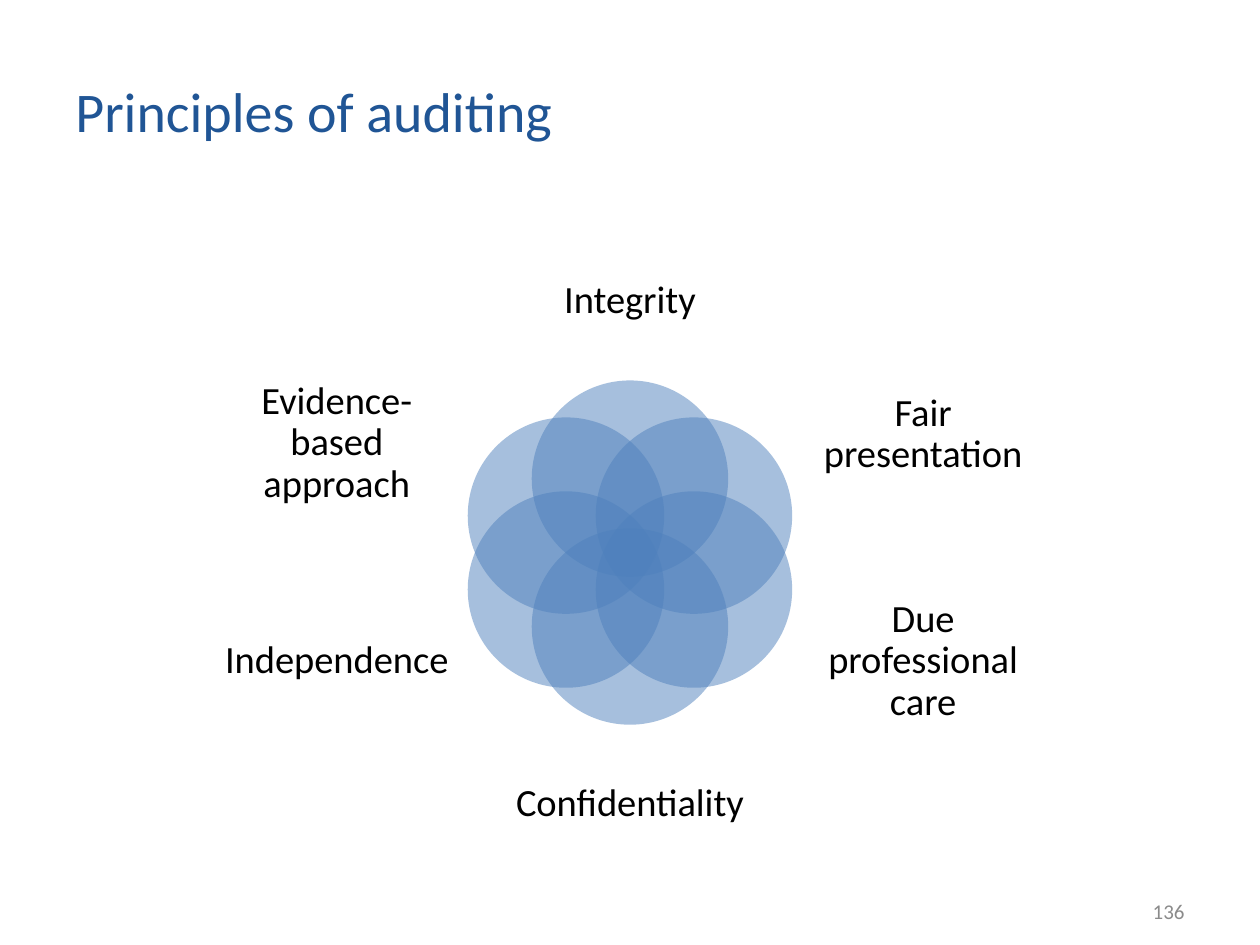
from dataclasses import dataclass
from math import cos, radians, sin

from lxml.etree import SubElement
from pptx import Presentation
from pptx.dml.color import RGBColor as RGB
from pptx.enum.shapes import MSO_SHAPE as Shape
from pptx.enum.text import MSO_ANCHOR as Anchor, PP_ALIGN as Align
from pptx.oxml.ns import qn
from pptx.util import Cm, Pt


@dataclass(frozen=True)
class Theme:
    font: str = "Calibri"
    title: RGB = RGB(0x20, 0x55, 0x95)
    text: RGB = RGB(0, 0, 0)
    muted: RGB = RGB(0x8B, 0x8B, 0x8B)
    petal: RGB = RGB(0x4F, 0x81, 0xBD)
    alpha: int = 50
    head: int = 32
    label: int = 22
    note: int = 12


THEME = Theme()

# Clockwise from the top
NAMES = ["Integrity", "Fair presentation", "Due professional care",
         "Confidentiality", "Independence", "Evidence-based approach"]


def add_text(slide, box, text, size, color, align=Align.LEFT):
    """Add a one-paragraph text, centred vertically in a box in cm."""
    frame = slide.shapes.add_textbox(*map(Cm, box)).text_frame
    frame.word_wrap = True
    frame.vertical_anchor = Anchor.MIDDLE
    para = frame.paragraphs[0]
    para.text = text
    para.alignment = align
    para.font.name = THEME.font
    para.font.size = Pt(size)
    para.font.color.rgb = color
    return frame


def add_petal(slide, x, y, size):
    """Add a translucent circle centred on x, y."""
    petal = slide.shapes.add_shape(
        Shape.OVAL, Cm(x - size / 2), Cm(y - size / 2), Cm(size), Cm(size))
    petal.shadow.inherit = False
    petal.line.fill.background()
    petal.fill.solid()
    petal.fill.fore_color.rgb = THEME.petal
    color = petal.fill._xPr.find(qn("a:solidFill"))[0]
    SubElement(color, qn("a:alpha"), val=str(THEME.alpha * 1000))


def add_label(slide, box, text):
    frame = add_text(slide, box, text, THEME.label, THEME.text, Align.CENTER)
    frame.margin_left = frame.margin_right = 0
    frame.margin_top = frame.margin_bottom = 0
    frame.paragraphs[0].line_spacing = 0.9


def add_venn(slide, box, names):
    """Draw a ring of six circles with a label outside each one."""
    left, top, width, height = box
    mid_x, mid_y = left + width / 2, top + height / 2
    size, ring = 3.96, 1.49
    end_w, end_h = 4.96, 2.7
    side_w, side_h = 4.7, 3.3
    right, end_x = left + width - side_w, mid_x - end_w / 2
    upper, lower = top + 2.57, top + 6.96
    places = [
        (end_x, top, end_w, end_h),
        (right, upper, side_w, 2.95),
        (right, lower, side_w, side_h),
        (end_x, top + height - end_h, end_w, end_h),
        (left, lower, side_w, side_h),
        (left, upper, side_w, side_h),
    ]
    for i, (name, place) in enumerate(zip(names, places)):
        turn = radians(i * 360 / len(names))
        add_petal(slide, mid_x + ring * sin(turn), mid_y - ring * cos(turn), size)
        add_label(slide, place, name)


def main():
    deck = Presentation()
    deck.slide_width, deck.slide_height = Cm(25.4), Cm(19.05)
    slide = deck.slides.add_slide(deck.slide_layouts[6])
    add_text(slide, (1.27, 0.76, 20.42, 2.92), "Principles of auditing",
             THEME.head, THEME.title)
    add_venn(slide, (4.44, 4.72, 16.52, 12.84), NAMES)
    add_text(slide, (18.21, 17.86, 5.92, 1.02), "136",
             THEME.note, THEME.muted, Align.RIGHT)
    deck.save("out.pptx")


if __name__ == "__main__":
    main()
